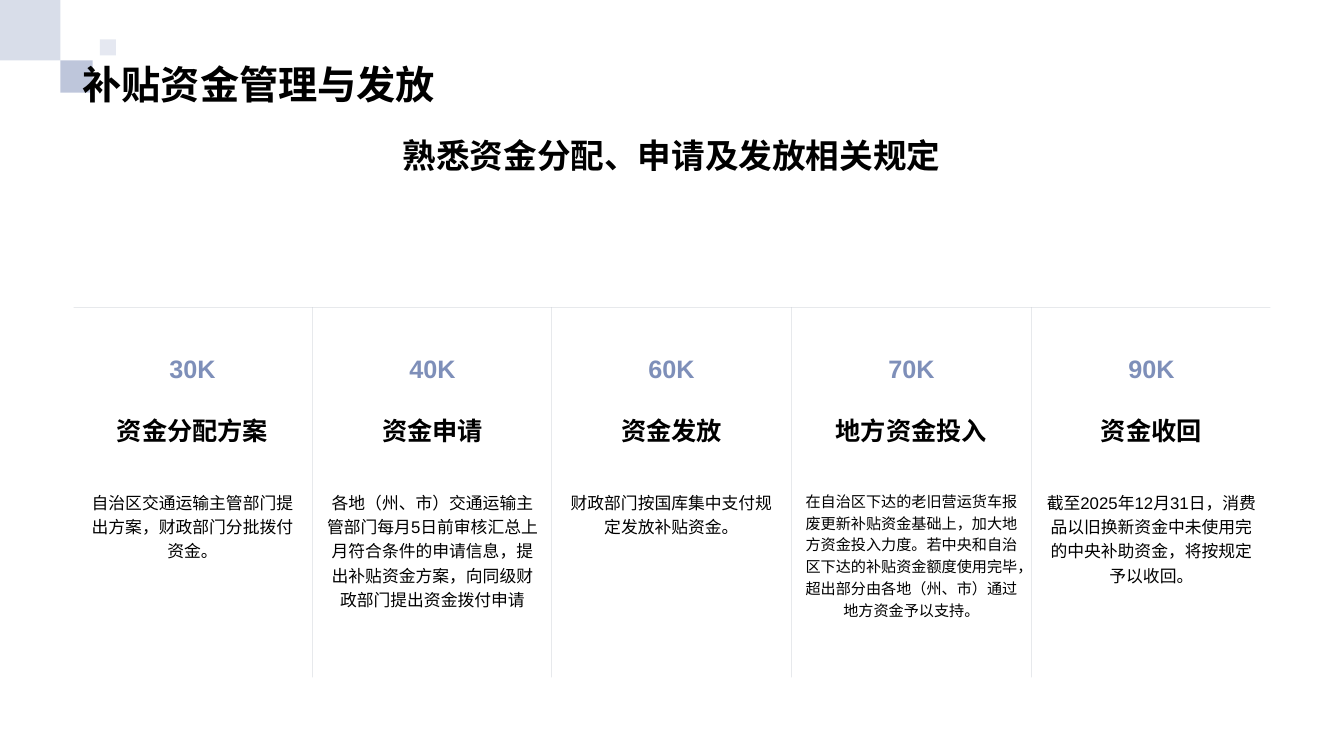
from pptx import Presentation
from pptx.dml.color import RGBColor
from pptx.enum.lang import MSO_LANGUAGE_ID
from pptx.enum.shapes import MSO_CONNECTOR, MSO_SHAPE
from pptx.enum.text import MSO_ANCHOR, MSO_AUTO_SIZE, PP_ALIGN
from pptx.oxml.ns import qn
from pptx.util import Pt
from lxml.etree import SubElement

EMU_PER_PX = 9144  # 100 px to the inch
BLACK = RGBColor(0x00, 0x00, 0x00)
BLUE = RGBColor(0x7E, 0x8F, 0xB9)
SLATE = RGBColor(0x77, 0x84, 0x95)

COLUMN_LEFT, COLUMN_PITCH, COLUMN_WIDTH = 73, 237.75, 236
RULE_TOP, RULE_BOTTOM, RULE_RIGHT = 305, 672, 1260

# left, top, side, opacity in percent
CORNER_SQUARES = [(0, 0, 60, 30), (60, 60, 32, 50), (99, 39, 16, 20)]

# amount, heading, description, description size
COLUMNS = [
    ("30K", "资金分配方案", "自治区交通运输主管部门提出方案，财政部门分批拨付资金。", 12),
    ("40K", "资金申请",
     "各地（州、市）交通运输主管部门每月5日前审核汇总上月符合条件的申请信息，"
     "提出补贴资金方案，向同级财政部门提出资金拨付申请", 12),
    ("60K", "资金发放", "财政部门按国库集中支付规定发放补贴资金。", 12),
    ("70K", "地方资金投入",
     "在自治区下达的老旧营运货车报废更新补贴资金基础上，加大地方资金投入力度。"
     "若中央和自治区下达的补贴资金额度使用完毕，"
     "超出部分由各地（州、市）通过地方资金予以支持。", 10.8),
    ("90K", "资金收回",
     "截至2025年12月31日，消费品以旧换新资金中未使用完的中央补助资金，"
     "将按规定予以收回。", 12),
]


def px(length):
    return round(length * EMU_PER_PX)


def set_all(target, values):
    for name, value in values.items():
        setattr(target, name, value)


def set_opacity(fill, percent):
    color = fill._xPr.find(qn("a:solidFill"))[0]
    SubElement(color, qn("a:alpha"), val=str(percent * 1000))


class SlideBuilder:
    font_name = "Arial"

    def __init__(self, presentation):
        self.slide = presentation.slides.add_slide(presentation.slide_layouts[5])

    def fill_text(self, shape, text, size, color=BLACK, bold=True,
                  align=PP_ALIGN.CENTER, anchor=MSO_ANCHOR.MIDDLE, spacing=1.0, wrap=True):
        frame = shape.text_frame
        set_all(frame, {"word_wrap": wrap, "auto_size": MSO_AUTO_SIZE.NONE,
                        "vertical_anchor": anchor})
        paragraph = frame.paragraphs[0]
        set_all(paragraph, {"alignment": align, "line_spacing": spacing})
        run = paragraph.add_run()
        run.text = text
        set_all(run.font, {"name": self.font_name, "size": Pt(size), "bold": bold,
                           "language_id": MSO_LANGUAGE_ID.SIMPLIFIED_CHINESE})
        run.font.color.rgb = color
        SubElement(run.font._element, qn("a:ea"), typeface=self.font_name)

    def title(self, left, top, width, height, text, size):
        shape = self.slide.shapes.title
        set_all(shape, {"left": px(left), "top": px(top),
                        "width": px(width), "height": px(height)})
        self.fill_text(shape, text, size, align=PP_ALIGN.LEFT, anchor=MSO_ANCHOR.BOTTOM)

    def text(self, left, top, width, height, text, size, **style):
        shape = self.slide.shapes.add_textbox(px(left), px(top), px(width), px(height))
        self.fill_text(shape, text, size, **style)

    def square(self, left, top, side, opacity):
        shape = self.slide.shapes.add_shape(
            MSO_SHAPE.RECTANGLE, px(left), px(top), px(side), px(side))
        shape.shadow.inherit = False
        shape.fill.solid()
        shape.fill.fore_color.rgb = BLUE
        set_opacity(shape.fill, opacity)
        shape.line.fill.background()
        # Keep the corner decoration behind the title
        self.slide.shapes.title._element.addprevious(shape._element)

    def rule(self, x1, y1, x2, y2):
        connector = self.slide.shapes.add_connector(
            MSO_CONNECTOR.STRAIGHT, px(x1), px(y1), px(x2), px(y2))
        connector.line.width = Pt(0.25)
        connector.line.color.rgb = SLATE
        set_opacity(connector.line.fill, 50)
        SubElement(connector._element.spPr, qn("a:effectLst"))


def main():
    presentation = Presentation()
    set_all(presentation, {"slide_width": px(1333), "slide_height": px(750)})
    builder = SlideBuilder(presentation)

    # Corner decoration and headings
    for square in CORNER_SQUARES:
        builder.square(*square)
    builder.title(72, 14, 1188, 98, "补贴资金管理与发放", 28)
    builder.text(72, 124, 1188, 55, "熟悉资金分配、申请及发放相关规定", 24,
                 anchor=MSO_ANCHOR.BOTTOM)

    # Five columns under one rule, with dividers between them
    builder.rule(COLUMN_LEFT, RULE_TOP, RULE_RIGHT, RULE_TOP)
    for index, (amount, heading, description, size) in enumerate(COLUMNS):
        left = round(COLUMN_LEFT + index * COLUMN_PITCH)
        if index:
            builder.rule(left - 1, RULE_TOP, left - 1, RULE_BOTTOM)
        builder.text(left, 346, COLUMN_WIDTH, 40, amount, 18, color=BLUE, wrap=False)
        builder.text(left, 404, COLUMN_WIDTH, 46, heading, 18)
        builder.text(left, 480, COLUMN_WIDTH, 156, description, size, bold=False,
                     anchor=MSO_ANCHOR.TOP, spacing=1.2)

    presentation.save("out.pptx")


if __name__ == "__main__":
    main()
